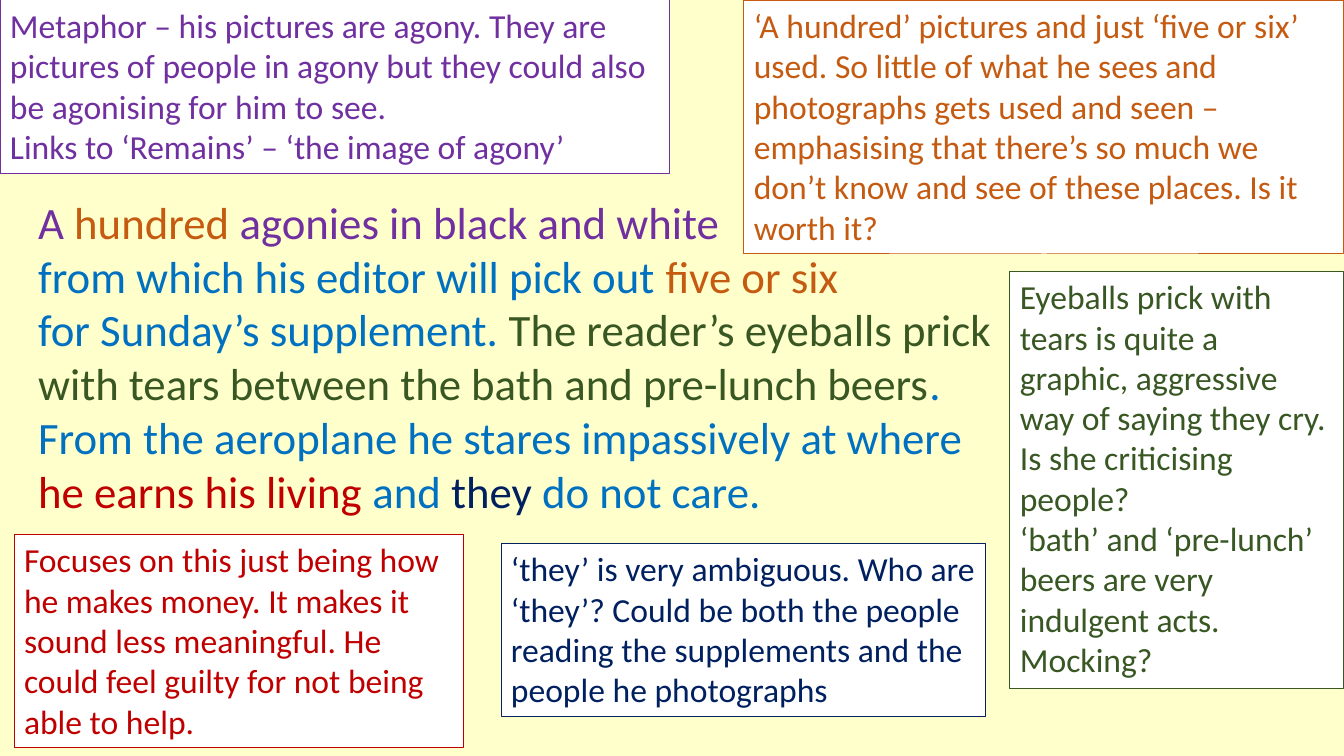
"""Build an annotated poem slide with colour-matched notes around the stanza."""
import dataclasses
import typing

import pptx
import pptx.dml.color
import pptx.enum.text
import pptx.util

SLIDE_WIDTH = pptx.util.Inches(13.333)
SLIDE_HEIGHT = pptx.util.Inches(7.5)
PURPLE, ORANGE, BLUE = "7030A0", "C55A11", "0070C0"
GREEN, RED, NAVY = "385723", "C00000", "002060"
PAPER, WHITE = "FFFFCC", "FFFFFF"
FRAME_FORMAT = {
    "word_wrap": True,
    "auto_size": pptx.enum.text.MSO_AUTO_SIZE.SHAPE_TO_FIT_TEXT,
}


class Area(typing.NamedTuple):
    """Position and size in percent of the slide."""

    left: float
    top: float
    width: float
    height: float


class Span(typing.NamedTuple):
    """Words in one colour."""

    text: str
    colour: str


@dataclasses.dataclass
class Note:
    """A framed comment whose text and border share a colour."""

    area: Area
    colour: str
    paragraphs: list[str]


POEM_AREA = Area(2.1, 25.07, 83.4, 44.4)
POEM = [
    [Span("A ", PURPLE), Span("hundred", ORANGE), Span(" agonies in black and white", PURPLE)],
    [Span("from which his editor will pick out ", BLUE), Span("five or six", ORANGE)],
    [Span("for Sunday’s supplement. ", BLUE), Span("The reader’s eyeballs prick", GREEN)],
    [Span("with tears between the bath and pre-lunch beers", GREEN), Span(".", BLUE)],
    [Span("From the aeroplane he stares impassively at where", BLUE)],
    [Span("he earns his living ", RED), Span("and ", BLUE), Span("they", NAVY),
     Span(" do not care.", BLUE)],
]
NOTES = [
    Note(Area(0, 0, 49.8, 22.93), PURPLE, [
        "Metaphor – his pictures are agony. They are pictures of people in agony "
        "but they could also be agonising for him to see.",
        "Links to ‘Remains’ – ‘the image of agony’",
    ]),
    Note(Area(55.35, 0, 44.65, 33.6), ORANGE, [
        "‘A hundred’ pictures and just ‘five or six’ used. So little of what he sees "
        "and photographs gets used and seen – emphasising that there’s so much we "
        "don’t know and see of these places. Is it worth it?",
    ]),
    Note(Area(75.15, 35.87, 24.85, 55.2), GREEN, [
        "Eyeballs prick with tears is quite a graphic, aggressive way of saying "
        "they cry. Is she criticising people?",
        "‘bath’ and ‘pre-lunch’ beers are very indulgent acts. Mocking?",
    ]),
    Note(Area(1.05, 70.67, 33.45, 28.27), RED, [
        "Focuses on this just being how he makes money. It makes it sound less "
        "meaningful. He could feel guilty for not being able to help.",
    ]),
    Note(Area(37.28, 71.87, 36.08, 22.93), NAVY, [
        "‘they’ is very ambiguous. Who are ‘they’? Could be both the people reading "
        "the supplements and the people he photographs",
    ]),
]


def rgb(colour: str) -> pptx.dml.color.RGBColor:
    """Turn a hex string into a colour."""
    return pptx.dml.color.RGBColor.from_string(colour)


def apply_format(target: typing.Any, values: dict[str, typing.Any]) -> None:
    """Set each named attribute on the target."""
    for name, value in values.items():
        setattr(target, name, value)


def paint(fill: typing.Any, colour: str) -> None:
    """Make a fill solid in the given colour."""
    fill.solid()
    fill.fore_color.rgb = rgb(colour)


def add_text(page: typing.Any, area: Area, lines: list[list[Span]], size: int) -> typing.Any:
    """Add a text box with one paragraph for each line of spans."""
    box = page.shapes.add_textbox(
        round(SLIDE_WIDTH * area.left / 100),
        round(SLIDE_HEIGHT * area.top / 100),
        round(SLIDE_WIDTH * area.width / 100),
        round(SLIDE_HEIGHT * area.height / 100),
    )
    frame = box.text_frame
    apply_format(frame, FRAME_FORMAT)
    for index, line in enumerate(lines):
        para = frame.add_paragraph() if index else frame.paragraphs[0]
        for span in line:
            run = para.add_run()
            run.text = span.text
            apply_format(run.font, {"name": "Calibri", "size": pptx.util.Pt(size)})
            run.font.color.rgb = rgb(span.colour)
    return box


def add_note(page: typing.Any, note: Note) -> None:
    """Add a white comment box with a coloured border."""
    lines = [[Span(text, note.colour)] for text in note.paragraphs]
    box = add_text(page, note.area, lines, 24)
    paint(box.fill, WHITE)
    paint(box.line.fill, note.colour)
    box.line.width = pptx.util.Pt(0.75)


def main() -> None:
    """Build and save the deck."""
    deck = pptx.Presentation()
    apply_format(deck, {"slide_width": SLIDE_WIDTH, "slide_height": SLIDE_HEIGHT})
    page = deck.slides.add_slide(deck.slide_layouts[6])
    paint(page.background.fill, PAPER)
    add_text(page, POEM_AREA, POEM, 32)
    for note in NOTES:
        add_note(page, note)
    deck.save("out.pptx")


if __name__ == "__main__":
    main()
